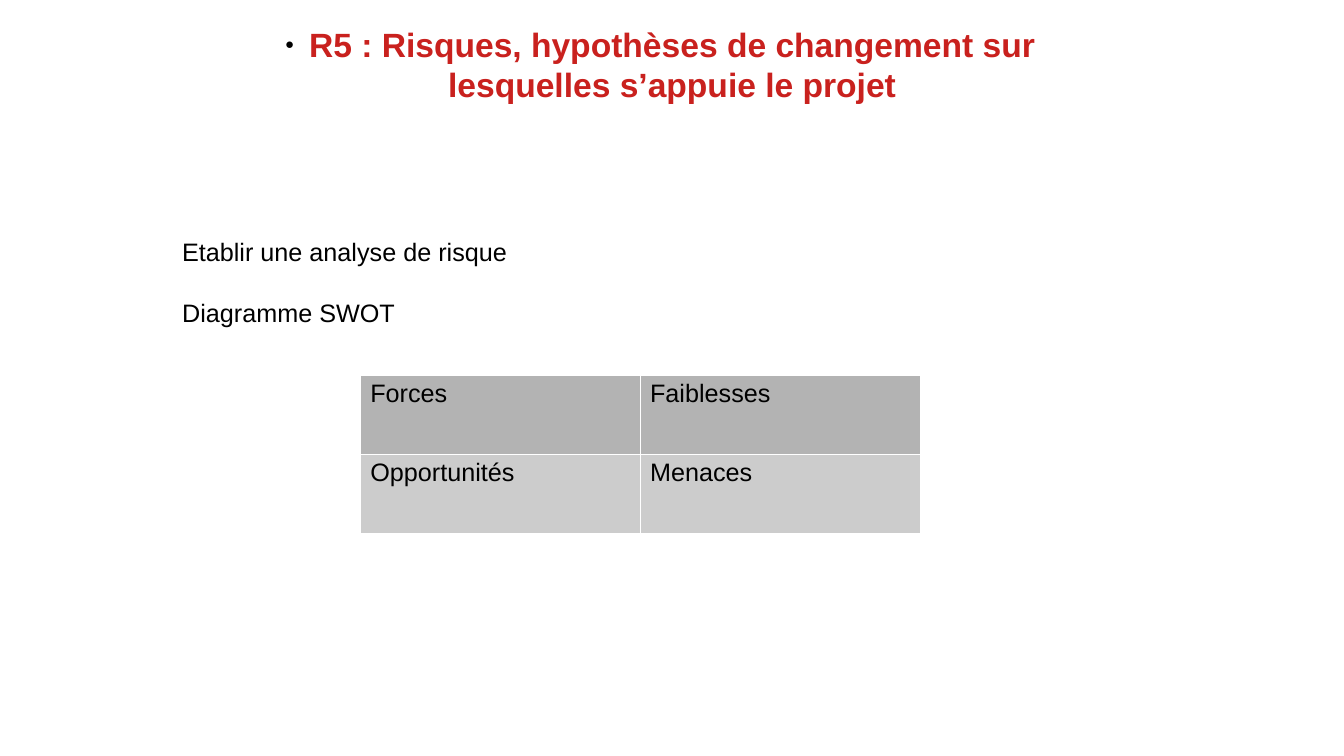
from lxml import etree
from pptx import Presentation
from pptx import util as u
from pptx.dml import color
from pptx.enum import text
from pptx.oxml import ns

COLOURS = {
    "title": "C9211E",
    "body": "000000",
    "border": "FFFFFF",
    "strengths_row": "B3B3B3",
    "outlook_row": "CCCCCC",
}
SWOT = [
    ("strengths_row", ("Forces", "Faiblesses")),
    ("outlook_row", ("Opportunités", "Menaces")),
]


def rgb(name):
    """Return the named colour."""
    return color.RGBColor.from_string(COLOURS[name])


def add_element(parent, tag, **attributes):
    """Append a DrawingML element to its parent."""
    return etree.SubElement(parent, ns.qn(tag), attributes)


def style_paragraph(paragraph, size, colour="body", bold=False):
    """Set the font of a whole paragraph."""
    font = paragraph.font
    font.name, font.size, font.bold = "Arial", u.Pt(size), bold
    font.color.rgb = rgb(colour)


def add_text_box(slide, left, top, width, height):
    """Add a wrapping text box and return its text frame."""
    shape = slide.shapes.add_textbox(u.Cm(left), u.Cm(top), u.Cm(width), u.Cm(height))
    shape.text_frame.word_wrap = True
    return shape.text_frame


def add_bullet(paragraph, indent):
    """Give a paragraph a small round bullet with a hanging indent."""
    properties = paragraph._p.get_or_add_pPr()
    properties.set("marL", str(u.Cm(indent)))
    properties.set("indent", str(-u.Cm(indent)))
    bullet_colour = add_element(properties, "a:buClr")
    add_element(bullet_colour, "a:srgbClr", val=COLOURS["body"])
    add_element(properties, "a:buSzPct", val="45000")
    add_element(properties, "a:buFont", typeface="Arial")
    add_element(properties, "a:buChar", char="●")


def add_title(slide, wording):
    """Add the centred, bulleted title."""
    paragraph = add_text_box(slide, 6, 0.48, 21.28, 1.52).paragraphs[0]
    paragraph.text = wording
    paragraph.alignment = text.PP_ALIGN.CENTER
    add_bullet(paragraph, 0.6)
    style_paragraph(paragraph, 24, "title", bold=True)


def add_steps(slide, steps):
    """Add the steps as spaced paragraphs."""
    frame = add_text_box(slide, 4.34, 5.84, 13.13, 3.78)
    frame.text = "\n".join(steps)
    for paragraph in frame.paragraphs:
        style_paragraph(paragraph, 18)
        paragraph.space_after = u.Pt(22)


def add_borders(cell):
    """Draw hairlines on all four sides of a cell."""
    properties = cell._tc.get_or_add_tcPr()
    for side in "LRTB":
        line = add_element(properties, f"a:ln{side}", w=str(u.Pt(0.06)))
        fill = add_element(line, "a:solidFill")
        add_element(fill, "a:srgbClr", val=COLOURS["border"])


def add_swot_table(slide):
    """Add the SWOT grid."""
    table = slide.shapes.add_table(
        2, 2, u.Cm(9.08), u.Cm(9.44), u.Cm(14.1), u.Cm(4)
    ).table
    table.first_row = table.horz_banding = False
    for row, (fill, labels) in enumerate(SWOT):
        for column, label in enumerate(labels):
            cell = table.cell(row, column)
            cell.text = label
            style_paragraph(cell.text_frame.paragraphs[0], 18)
            add_borders(cell)
            cell.fill.solid()
            cell.fill.fore_color.rgb = rgb(fill)


def main():
    """Build and save the risk slide."""
    presentation = Presentation()
    presentation.slide_width, presentation.slide_height = u.Cm(33.87), u.Cm(19.05)
    slide = presentation.slides.add_slide(presentation.slide_layouts[6])
    add_title(
        slide,
        "R5\u00a0: Risques, hypothèses de changement sur lesquelles s’appuie le projet".replace("\u00a0", " "),
    )
    add_steps(slide, ("Etablir une analyse de risque", "Diagramme SWOT"))
    add_swot_table(slide)
    presentation.save("out.pptx")


if __name__ == "__main__":
    main()
